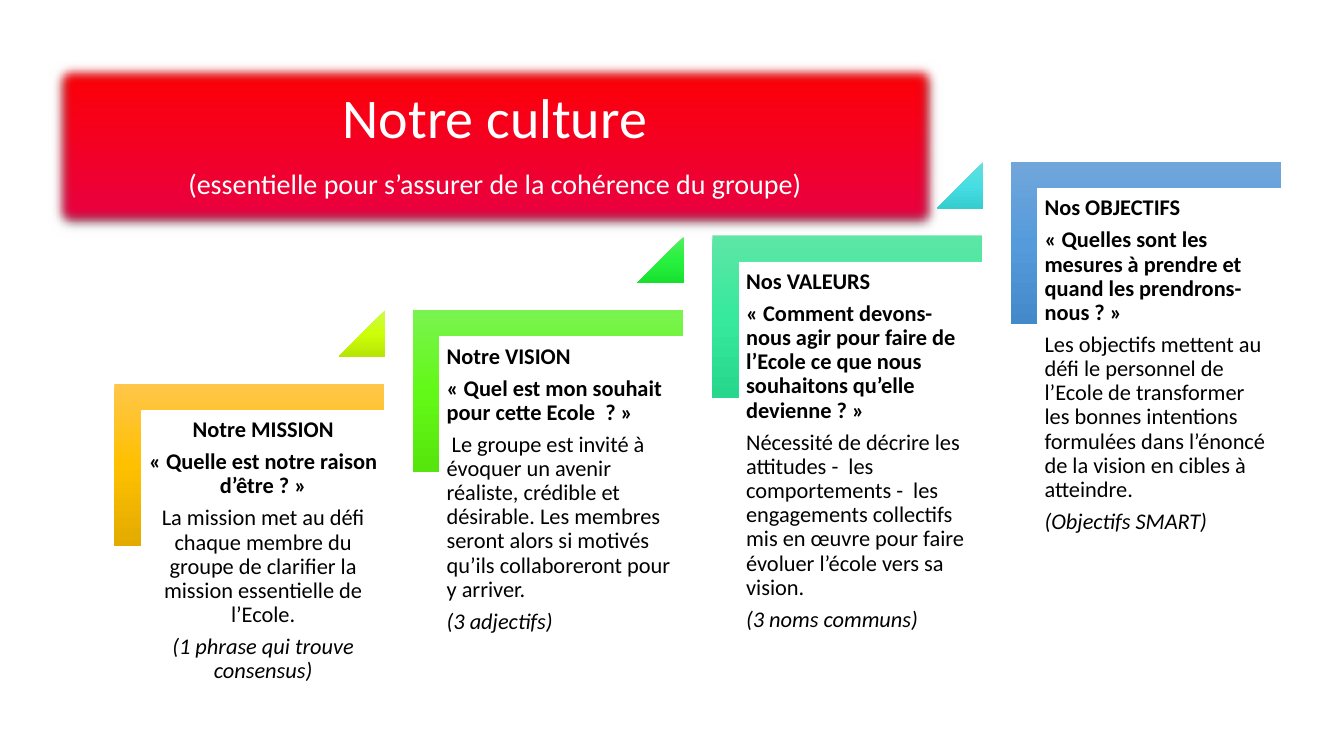
from lxml import etree
from pptx import Presentation
from pptx.dml.color import RGBColor
from pptx.enum.shapes import MSO_SHAPE as Shape
from pptx.enum.text import MSO_ANCHOR as Anchor, PP_ALIGN as Align
from pptx.oxml import parse_xml
from pptx.oxml.ns import nsdecls, qn
from pptx.util import Pt

PX = 9144  # 100 px to the inch
FONT = "Calibri"
COLORS = {
    "white": "FFFFFF", "black": "000000",
    "banner": ["FF0000", "E70048"],
    "mission": ["FFC64B", "FFC000", "E3AB00"],
    "vision": ["7AF350", "63F916", "56E50C"],
    "valeurs": ["5EE6A6", "37E99C", "27D88C"],
    "objectifs": ["71A6DB", "559BDB", "448ACA"],
    "to_vision": ["CEFA4C", "CCFF08", "B7E505"],
    "to_valeurs": ["56EC62", "27F13E", "18E02F"],
    "to_objectifs": ["67DDE0", "46DEE2", "36CDD1"],
}

# colour, arrow colour, alignment, title, question, description, outcome
STEPS = [
    ("mission", "to_vision", Align.CENTER, "Notre MISSION",
     "« Quelle est notre raison d’être ? »",
     "La mission met au défi chaque membre du groupe de clarifier la mission "
     "essentielle de l’Ecole.",
     "(1 phrase qui trouve consensus)"),
    ("vision", "to_valeurs", Align.LEFT, "Notre VISION",
     "« Quel est mon souhait pour cette Ecole  ? »",
     " Le groupe est invité à évoquer un avenir réaliste, crédible et désirable. "
     "Les membres seront alors si motivés qu’ils collaboreront pour y arriver.",
     "(3 adjectifs)"),
    ("valeurs", "to_objectifs", Align.LEFT, "Nos VALEURS",
     "« Comment devons-nous agir pour faire de l’Ecole ce que nous souhaitons "
     "qu’elle devienne ? »",
     "Nécessité de décrire les attitudes -  les comportements -  les engagements "
     "collectifs mis en œuvre pour faire évoluer l’école vers sa vision.",
     "(3 noms communs)"),
    ("objectifs", None, Align.LEFT, "Nos OBJECTIFS",
     "« Quelles sont les mesures à prendre et quand les prendrons-nous ? »",
     "Les objectifs mettent au défi le personnel de l’Ecole de transformer les "
     "bonnes intentions formulées dans l’énoncé de la vision en cibles à atteindre.",
     "(Objectifs SMART)"),
]


def emu(*lengths):
    return [length * PX for length in lengths]


def add_gradient_shape(page, kind, box, colors):
    """Add a borderless shape with an upright top-to-bottom gradient."""
    shape = page.shapes.add_shape(kind, *emu(*box))
    shape.shadow.inherit = False
    shape.line.fill.background()
    shape.fill.gradient()
    gradient = shape._element.spPr.find(qn("a:gradFill"))
    gradient.set("rotWithShape", "0")
    for child in list(gradient):
        gradient.remove(child)
    stops = etree.SubElement(gradient, qn("a:gsLst"))
    for index, color in enumerate(colors):
        position = 100000 * index // (len(colors) - 1)
        stop = etree.SubElement(stops, qn("a:gs"), pos=str(position))
        etree.SubElement(stop, qn("a:srgbClr"), val=color)
    etree.SubElement(gradient, qn("a:lin"), ang="5400000", scaled="0")
    return shape


def write_paragraphs(frame, lines, align, color):
    """Write (text, size, bold, italic) lines."""
    for index, (text, size, bold, italic) in enumerate(lines):
        para = frame.add_paragraph() if index else frame.paragraphs[0]
        para.text = text
        para.alignment = align
        para.line_spacing = 0.9
        para.space_after = Pt(round(size * 0.35, 1))
        font = para.font
        font.name, font.size = FONT, Pt(size)
        font.bold, font.italic = bold, italic
        font.color.rgb = RGBColor.from_string(COLORS[color])


def set_frame(frame, side, top, anchor):
    frame.word_wrap = True
    frame.vertical_anchor = anchor
    frame.margin_left = frame.margin_right = side * PX
    frame.margin_top = frame.margin_bottom = top * PX


def add_banner(page, box):
    banner = add_gradient_shape(page, Shape.RECTANGLE, box, COLORS["banner"])
    # Soft edge and shadow
    effects = banner._element.spPr.find(qn("a:effectLst"))
    effects.append(parse_xml(
        f'<a:outerShdw {nsdecls("a")} blurRad="57150" dist="19050" dir="5400000" '
        'algn="ctr" rotWithShape="0"><a:srgbClr val="000000">'
        '<a:alpha val="63000"/></a:srgbClr></a:outerShdw>'))
    etree.SubElement(effects, qn("a:softEdge"), rad="112500")
    set_frame(banner.text_frame, 32, 0, Anchor.MIDDLE)
    write_paragraphs(banner.text_frame, [
        ("Notre culture", 40, False, False),
        ("(essentielle pour s’assurer de la cohérence du groupe)", 20, False, False),
    ], Align.CENTER, "white")


def add_step(page, box, step):
    left, top, width, height = box
    color, arrow_color, align, title, question, description, outcome = step
    # Corner bracket
    corner = add_gradient_shape(
        page, Shape.CORNER, (left + 27, top - 81, 161, 268), COLORS[color])
    corner.rotation = 90
    corner.adjustments[0] = corner.adjustments[1] = 0.16
    # Text
    frame = page.shapes.add_textbox(*emu(*box)).text_frame
    set_frame(frame, 7, 7, Anchor.TOP)
    write_paragraphs(frame, [
        (title, 16, True, False), (question, 16, True, False),
        (description, 16, False, False), (outcome, 16, False, True),
    ], align, "black")
    # Triangle leading to the next step
    if arrow_color:
        triangle = add_gradient_shape(
            page, Shape.ISOSCELES_TRIANGLE,
            (left + width - 46, top - 100, 46, 46), COLORS[arrow_color])
        triangle.adjustments[0] = 1


def add_staircase(page, box):
    """Spread the steps from the bottom left to the top right of the box."""
    left, top, width, height = box
    step_width, step_height = 242, 212
    gaps = len(STEPS) - 1
    for index, step in enumerate(STEPS):
        step_left = left + round((width - step_width) * index / gaps)
        step_top = top + round((height - step_height) * (gaps - index) / gaps)
        add_step(page, (step_left, step_top, step_width, step_height), step)


def main():
    deck = Presentation()
    deck.slide_width, deck.slide_height = emu(1333, 750)
    page = deck.slides.add_slide(deck.slide_layouts[6])
    add_banner(page, (48, 58, 886, 173))
    add_staircase(page, (140, 188, 1131, 432))
    deck.save("out.pptx")


if __name__ == "__main__":
    main()
